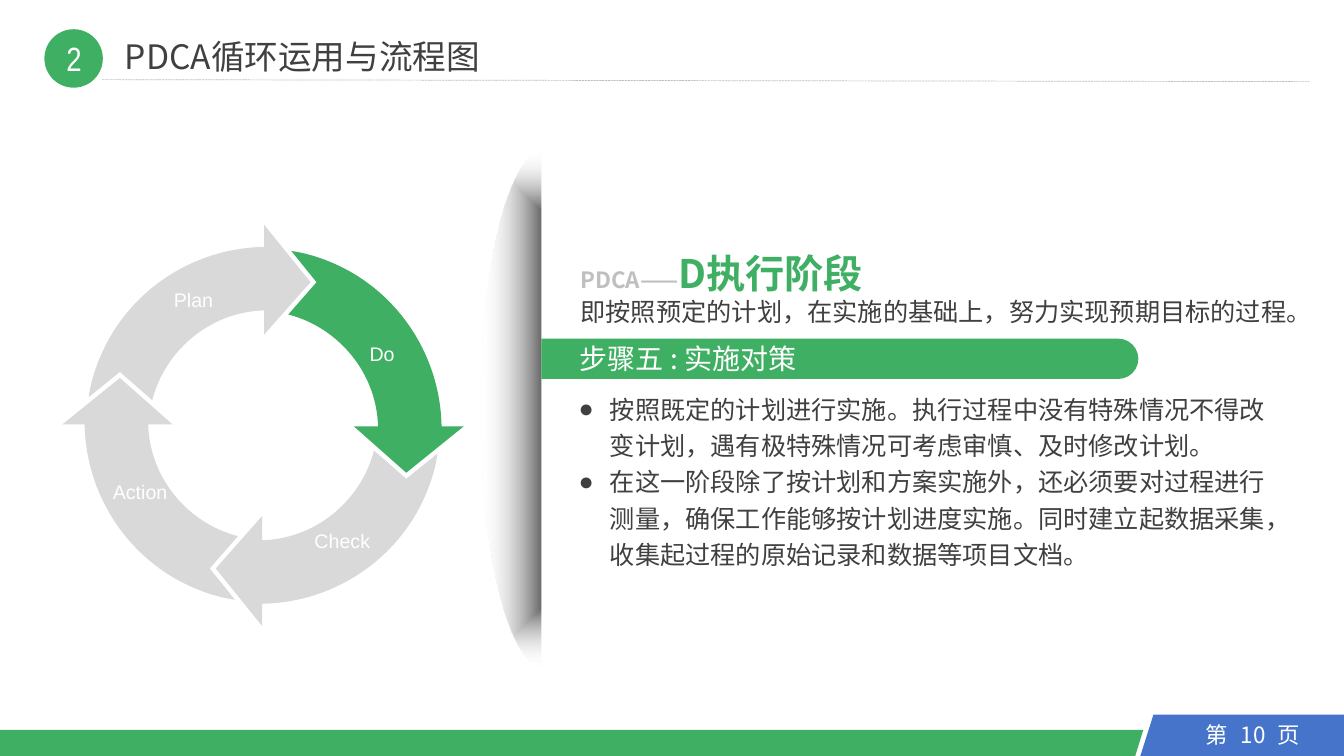
from dataclasses import dataclass
from typing import NamedTuple

from lxml.etree import SubElement
from pptx import Presentation
from pptx.dml.color import RGBColor
from pptx.enum.dml import MSO_LINE
from pptx.enum.shapes import MSO_CONNECTOR, MSO_SHAPE
from pptx.enum.text import MSO_ANCHOR, PP_ALIGN
from pptx.oxml import parse_xml
from pptx.oxml.ns import nsdecls, qn
from pptx.shapes.autoshape import Shape
from pptx.util import Inches, Pt

GREEN = RGBColor(0x3F, 0xAF, 0x63)
BLUE = RGBColor(0x46, 0x74, 0xCA)
WHITE = RGBColor(0xFF, 0xFF, 0xFF)
LIGHT = RGBColor(0xD9, 0xD9, 0xD9)
SILVER = RGBColor(0xBF, 0xBF, 0xBF)
DARK = RGBColor(0x40, 0x40, 0x40)
CJK = "Noto Sans CJK SC"


class Point(NamedTuple):
    x: float
    y: float


@dataclass
class Stage:
    label: str
    turns: int  # clockwise quarter turns from the "Do" arrow
    color: RGBColor
    insets: tuple[float, float, float, float]


@dataclass
class TextBlock:
    paragraphs: list[str]
    box: tuple[float, float, float, float]
    size: int
    color: RGBColor
    font: str = CJK
    wrap: bool = True


prs = Presentation()
prs.slide_width, prs.slide_height = Inches(13.33), Inches(7.5)
slide = prs.slides.add_slide(prs.slide_layouts[6])
shapes = slide.shapes


def style_font(font, face: str, size: int, color: RGBColor, bold: bool = False) -> None:
    font.size, font.name = Pt(size), face
    if bold:
        font.bold = True
    font.color.rgb = color
    SubElement(font._element, qn("a:ea")).set("typeface", face)


def paint(shape: Shape, color: RGBColor) -> Shape:
    shape.fill.solid()
    shape.fill.fore_color.rgb = color
    shape.line.fill.background()
    shape.shadow.inherit = False
    return shape


def add_preset(kind: MSO_SHAPE, box: tuple[float, ...], color: RGBColor) -> Shape:
    return paint(shapes.add_shape(kind, *map(Inches, box)), color)


def add_outline(points: list[Point], color: RGBColor, curves: tuple[int, ...] = ()) -> Shape:
    """Closed outline; each curve takes the three segments from the given index."""
    corners = [(Inches(p.x), Inches(p.y)) for p in points]
    builder = shapes.build_freeform(*corners[0])
    builder.add_line_segments(corners[1:], close=True)
    shape = builder.convert_to_shape()
    segments = list(shape._element.iter(qn("a:lnTo")))
    for first in curves:
        bezier = parse_xml(f"<a:cubicBezTo {nsdecls('a')}/>")
        segments[first].addprevious(bezier)
        for segment in segments[first:first + 3]:
            bezier.append(segment[0])
            segment.getparent().remove(segment)
    return paint(shape, color)


def add_text(block: TextBlock) -> Shape:
    box = shapes.add_textbox(*map(Inches, block.box))
    frame = box.text_frame
    frame.word_wrap = block.wrap
    frame.text = "\n".join(block.paragraphs)
    for paragraph in frame.paragraphs:
        style_font(paragraph.font, block.font, block.size, block.color)
    return box


def turn(point: Point, turns: int) -> Point:
    for _ in range(turns):
        point = Point(-point.y, point.x)
    return point


# Footer
add_outline([Point(0, 7.5), Point(11.26, 7.5), Point(11.34, 7.24), Point(0, 7.24)], GREEN)
add_outline([Point(11.44, 7.09), Point(11.31, 7.5), Point(13.33, 7.5), Point(13.33, 7.09)], BLUE)
page = add_text(TextBlock(["第\t页"], (11.86, 7.11, 1.2, 0.37), 16, WHITE))
tab_stops = parse_xml(f'<a:tabLst {nsdecls("a")}><a:tab pos="{Inches(0.71)}" algn="l"/></a:tabLst>')
page.text_frame.paragraphs[0]._p.get_or_add_pPr().insert(0, tab_stops)
number = add_text(TextBlock(["10"], (12.18, 7.11, 0.5, 0.37), 16, WHITE, wrap=False))
number.text_frame.paragraphs[0].alignment = PP_ALIGN.CENTER

# Curved shadow, its right half covered in white
shade = add_preset(MSO_SHAPE.OVAL, (4.77, 1.49, 1.26, 5.13), SILVER)
shade_props = shade._element.spPr
shade_props.replace(shade_props.find(qn("a:solidFill")), parse_xml(
    f'<a:gradFill {nsdecls("a")} rotWithShape="1"><a:gsLst>'
    '<a:gs pos="0"><a:srgbClr val="595959"/></a:gs>'
    '<a:gs pos="100000"><a:srgbClr val="FFFFFF"><a:alpha val="0"/></a:srgbClr></a:gs>'
    '</a:gsLst><a:path path="shape">'
    '<a:fillToRect l="50000" t="50000" r="50000" b="50000"/></a:path></a:gradFill>'))
add_preset(MSO_SHAPE.RECTANGLE, (5.37, 1.14, 0.74, 6.04), WHITE)

# PDCA cycle: one arrow, relative to the centre, turned by quarters
CENTRE = Point(2.61, 4.22)
ARROW = [
    Point(0.28, -1.73),
    Point(0.49, -1.7), Point(0.7, -1.62), Point(0.89, -1.51),  # outer arc
    Point(1.43, -1.19), Point(1.76, -0.61), Point(1.77, 0.01),
    Point(1.99, 0.01), Point(1.42, 0.47), Point(0.9, 0.01), Point(1.14, 0.01),  # head
    Point(1.13, -0.39), Point(0.91, -0.76), Point(0.56, -0.97),  # inner arc
    Point(0.46, -1.03), Point(0.36, -1.07), Point(0.25, -1.1),
    Point(0.53, -1.42),
]
ARCS = (0, 3, 10, 13)
STAGES = [
    Stage("Do", 0, GREEN, (0.24, 0, 0.12, 0.2)),
    Stage("Plan", 3, LIGHT, (0.39, 0, 0.51, 0.31)),
    Stage("Action", 2, LIGHT, (0, 0, 0.2, 0)),
    Stage("Check", 1, LIGHT, (0.31, 0, 0, 0)),
]
for stage in STAGES:
    turned = [turn(point, stage.turns) for point in ARROW]
    arrow = add_outline([Point(CENTRE.x + p.x, CENTRE.y + p.y) for p in turned],
                        stage.color, ARCS)
    frame = arrow.text_frame
    frame.margin_left, frame.margin_top, frame.margin_right, frame.margin_bottom = map(
        Inches, stage.insets)
    frame.vertical_anchor = MSO_ANCHOR.MIDDLE
    frame.word_wrap = True
    frame.text = stage.label
    label = frame.paragraphs[0]
    label.alignment = PP_ALIGN.CENTER
    label.line_spacing = 1.2
    label.space_before = label.space_after = Pt(4.5)
    style_font(label.font, "Arial", 14, WHITE)

# Stage description
measures = add_text(TextBlock([
    "按照既定的计划进行实施。执行过程中没有特殊情况不得改变计划，遇有极特殊情况可考虑审慎、及时修改计划。",
    "在这一阶段除了按计划和方案实施外，还必须要对过程进行测量，确保工作能够按计划进度实施。"
    "同时建立起数据采集，收集起过程的原始记录和数据等项目文档。",
], (5.64, 3.8, 7.24, 1.92), 18, DARK))
for measure in measures.text_frame.paragraphs:
    measure.line_spacing = 1.2
    props = measure._p.get_or_add_pPr()
    props.set("marL", str(Inches(0.31)))
    props.set("indent", str(-Inches(0.31)))
    for bullet in ('buFont {} typeface="Arial"', 'buChar {} char="●"'):
        props.find(qn("a:defRPr")).addprevious(
            parse_xml(f"<a:{bullet.format(nsdecls('a'))}/>"))

heading = shapes.add_textbox(*map(Inches, (5.66, 2.42, 3.33, 0.57))).text_frame
heading.word_wrap = False
for words, size, color in (("PDCA——", 16, SILVER), ("D执行阶段", 28, GREEN)):
    run = heading.paragraphs[0].add_run()
    run.text = words
    style_font(run.font, CJK, size, color, bold=True)

step_bar = add_preset(MSO_SHAPE.ROUND_2_SAME_RECTANGLE, (8.13, 0.6, 0.4, 5.92), GREEN)
step_bar.adjustments[0], step_bar.adjustments[1] = 0.5, 0
step_bar.rotation = 90
add_text(TextBlock(["步骤五 : 实施对策"], (5.65, 3.34, 3.76, 0.44), 20, WHITE))
add_text(TextBlock(["即按照预定的计划，在实施的基础上，努力实现预期目标的过程。"],
                   (5.66, 2.89, 7.22, 0.4), 18, DARK))

# Title
add_preset(MSO_SHAPE.OVAL, (0.44, 0.29, 0.58, 0.58), GREEN)
add_text(TextBlock(["2"], (0.56, 0.33, 0.37, 0.5), 24, WHITE, "Arial Narrow", False))
add_text(TextBlock(["PDCA循环运用与流程图"], (1.14, 0.31, 3.82, 0.5), 24, DARK, wrap=False))
rule = shapes.add_connector(MSO_CONNECTOR.STRAIGHT, *map(Inches, (1.01, 0.79, 12.99, 0.81)))
rule.line.color.rgb = SILVER
rule.line.width = Pt(0.5)
rule.line.dash_style = MSO_LINE.SQUARE_DOT
SubElement(rule._element.spPr, qn("a:effectLst"))

prs.save("out.pptx")
